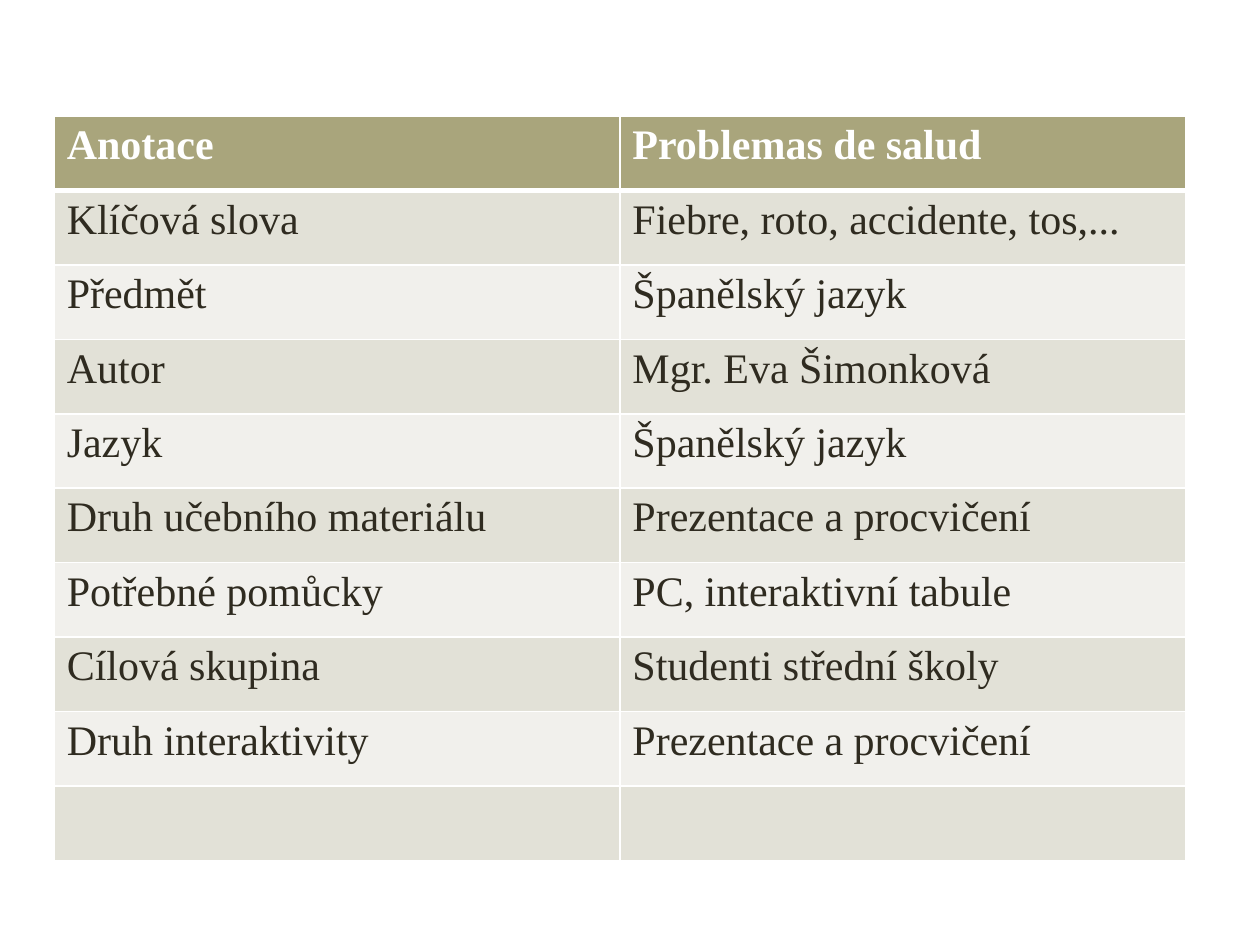
from lxml import etree
from pptx import Presentation
from pptx.dml.color import RGBColor
from pptx.oxml.ns import qn
from pptx.util import Inches, Pt

FONT = "Times New Roman"
WHITE, DARK = "FFFFFF", "2F2B20"
HEADER_FILL, BAND_FILLS = "A9A57C", ("F1F0EC", "E2E1D7")
THIN, THICK = 1, 3
ROWS = [
    ("Anotace", "Problemas de salud"),
    ("Klíčová slova", "Fiebre, roto, accidente, tos,..."),
    ("Předmět", "Španělský jazyk"),
    ("Autor", "Mgr. Eva Šimonková"),
    ("Jazyk", "Španělský jazyk"),
    ("Druh učebního materiálu", "Prezentace a procvičení"),
    ("Potřebné pomůcky", "PC, interaktivní tabule"),
    ("Cílová skupina", "Studenti střední školy"),
    ("Druh interaktivity", "Prezentace a procvičení"),
    ("", ""),
]


def color(value):
    """Turn a hex string into a colour."""
    return RGBColor.from_string(value)


def set_borders(cell, top, bottom):
    """Draw white borders with the given top and bottom widths in points."""
    properties = cell._tc.get_or_add_tcPr()
    for side, width in (("L", THIN), ("R", THIN), ("T", top), ("B", bottom)):
        line = etree.SubElement(properties, qn(f"a:ln{side}"), w=str(Pt(width)))
        fill = etree.SubElement(line, qn("a:solidFill"))
        etree.SubElement(fill, qn("a:srgbClr"), val=WHITE)


def write_text(cell, text, text_color, bold):
    """Write one run of text in a cell."""
    para = cell.text_frame.paragraphs[0]
    para.font.size = Pt(24)
    if text:
        span = para.add_run()
        span.text = text
        span.font.name = FONT
        span.font.size = Pt(24)
        span.font.bold = bold
        span.font.color.rgb = color(text_color)


def style_cell(cell, text, row):
    """Give a cell its borders, fill and text according to its row."""
    header = row == 0
    set_borders(cell, THICK if row == 1 else THIN, THICK if header else THIN)
    cell.fill.solid()
    cell.fill.fore_color.rgb = color(HEADER_FILL if header else BAND_FILLS[row % 2])
    write_text(cell, text, WHITE if header else DARK, header)


def add_annotation_table(page):
    """Add the two-column table of lesson details."""
    frame = page.shapes.add_table(len(ROWS), 2, Inches(0.43), Inches(0.92),
                                  Inches(8.98), Inches(5.91))
    for row, texts in enumerate(ROWS):
        for column, text in enumerate(texts):
            style_cell(frame.table.cell(row, column), text, row)


def main():
    """Build and save the slide."""
    deck = Presentation()
    deck.slide_width, deck.slide_height = Inches(10), Inches(7.5)
    page = deck.slides.add_slide(deck.slide_layouts[6])
    add_annotation_table(page)
    deck.save("out.pptx")


if __name__ == "__main__":
    main()
